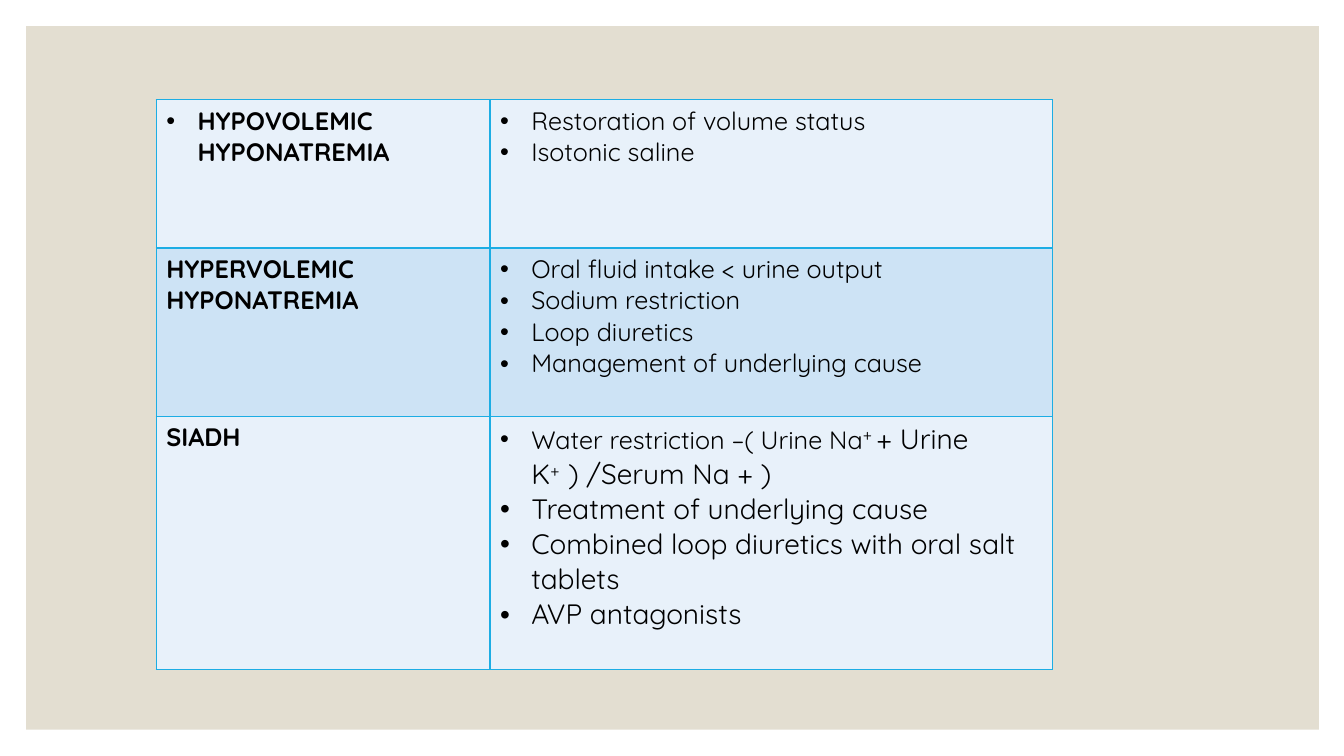
"""Builds the hyponatremia treatment table slide."""
from lxml.etree import SubElement
from pptx import Presentation
from pptx.dml.color import RGBColor
from pptx.enum.shapes import MSO_SHAPE
from pptx.oxml.ns import qn
from pptx.util import Inches, Pt

FONT = "Quicksand"
BLACK = RGBColor(0x00, 0x00, 0x00)
SAND = RGBColor(0xE3, 0xDE, 0xD1)
PALE = RGBColor(0xE8, 0xF1, 0xFA)
SKY = RGBColor(0xCD, 0xE3, 0xF5)
BORDER = RGBColor(0x1C, 0xAD, 0xE4)

COL_WIDTHS = [3.31, 5.58]
WATER_RESTRICTION = [
    ("Water restriction –( Urine Na", 18, False),
    ("+ ", 20, True),
    ("+ Urine K", 20, False),
    ("+  ", 20, True),
    (") /Serum Na + )", 20, False),
]
ROWS = [
    dict(height=1.47, fill=PALE, size=18, bulleted=True,
         condition="HYPOVOLEMIC HYPONATREMIA",
         treatments=["Restoration of volume status", "Isotonic saline"]),
    dict(height=1.67, fill=SKY, size=18, bulleted=False,
         condition="HYPERVOLEMIC HYPONATREMIA",
         treatments=["Oral fluid intake < urine output", "Sodium restriction",
                     "Loop diuretics", "Management of underlying cause"]),
    dict(height=2.51, fill=PALE, size=20, bulleted=False,
         condition="SIADH",
         treatments=[WATER_RESTRICTION, "Treatment of underlying cause",
                     "Combined loop diuretics with oral salt tablets",
                     "AVP antagonists"]),
]


def add_bullet(p):
    pPr = p._p.get_or_add_pPr()
    pPr.set("marL", str(Inches(0.31)))
    pPr.set("indent", str(-Inches(0.31)))
    SubElement(pPr, qn("a:buFont")).set("typeface", "Arial")
    SubElement(pPr, qn("a:buChar")).set("char", "•")


def add_run(p, text, size, raised=False, bold=False):
    r = p.add_run()
    r.text = text
    r.font.name = FONT
    r.font.size = Pt(size)
    r.font.bold = bold
    r.font.color.rgb = BLACK
    if raised:
        r._r.get_or_add_rPr().set("baseline", "30000")


def style_cell(cell, fill):
    tcPr = cell._tc.get_or_add_tcPr()
    for side in ("a:lnL", "a:lnR", "a:lnT", "a:lnB"):
        ln = SubElement(tcPr, qn(side), w=str(Pt(1)))
        color = SubElement(SubElement(ln, qn("a:solidFill")), qn("a:srgbClr"))
        color.set("val", str(BORDER))
    cell.fill.solid()
    cell.fill.fore_color.rgb = fill


def fill_row(table, i, row):
    table.rows[i].height = Inches(row["height"])
    condition, treatment = table.cell(i, 0), table.cell(i, 1)
    for cell in (condition, treatment):
        style_cell(cell, row["fill"])

    p = condition.text_frame.paragraphs[0]
    if row["bulleted"]:
        add_bullet(p)
    add_run(p, row["condition"], 18, bold=True)

    tf = treatment.text_frame
    for n, item in enumerate(row["treatments"]):
        p = tf.add_paragraph() if n else tf.paragraphs[0]
        add_bullet(p)
        runs = [(item, row["size"], False)] if isinstance(item, str) else item
        for text, size, raised in runs:
            add_run(p, text, size, raised)


def main():
    prs = Presentation()
    prs.slide_width, prs.slide_height = Inches(13.33), Inches(7.5)
    s = prs.slides.add_slide(prs.slide_layouts[6])

    panel = s.shapes.add_shape(MSO_SHAPE.RECTANGLE, Inches(0.26), Inches(0.26),
                               Inches(12.82), Inches(6.98))
    panel.shadow.inherit = False
    panel.fill.solid()
    panel.fill.fore_color.rgb = SAND
    panel.line.fill.background()

    height = sum(row["height"] for row in ROWS)
    table = s.shapes.add_table(len(ROWS), len(COL_WIDTHS), Inches(1.55), Inches(0.99),
                               Inches(sum(COL_WIDTHS)), Inches(height)).table
    table.first_row = False
    table.horz_banding = False
    for column, width in zip(table.columns, COL_WIDTHS):
        column.width = Inches(width)
    for i, row in enumerate(ROWS):
        fill_row(table, i, row)

    prs.save("out.pptx")


if __name__ == "__main__":
    main()
